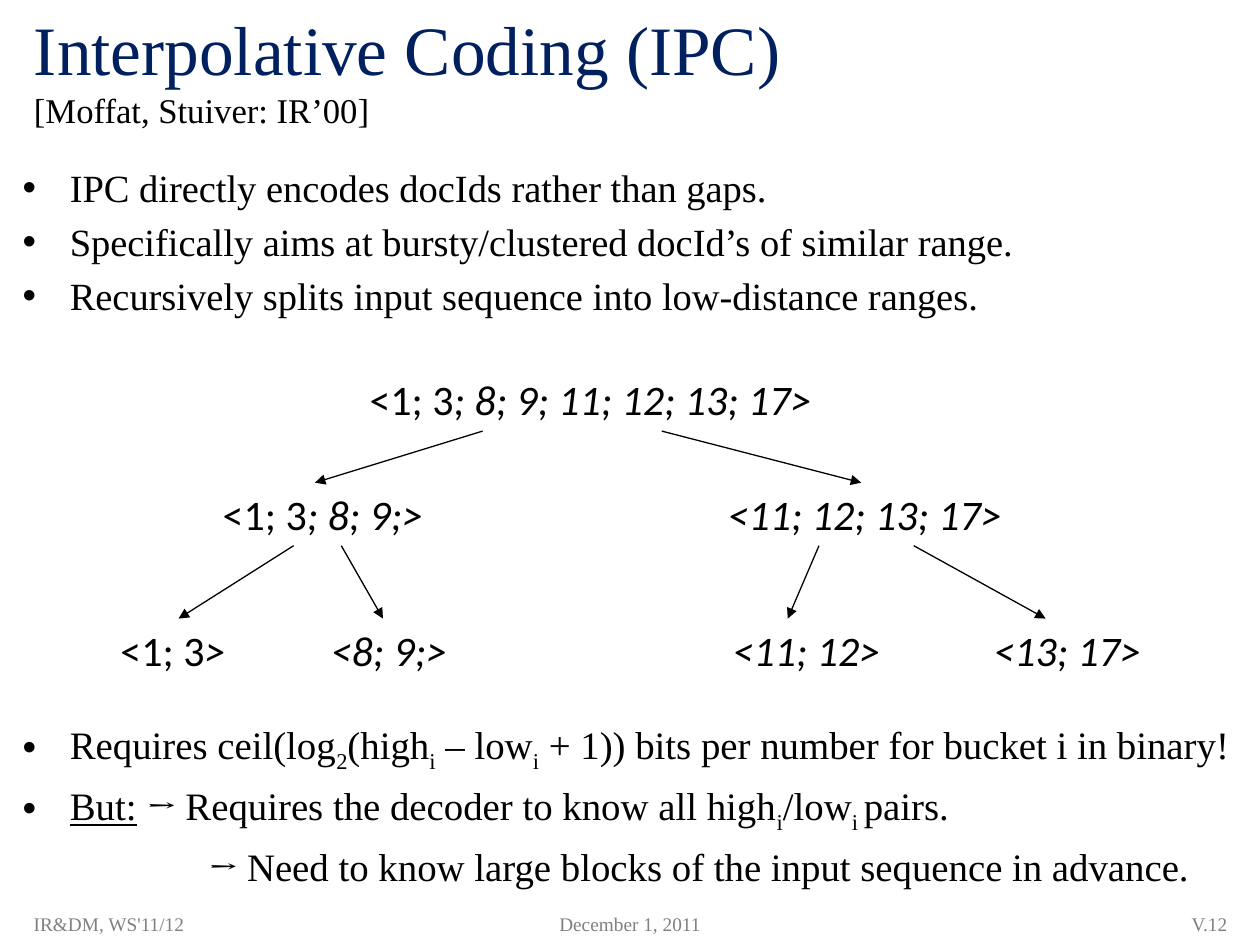
from dataclasses import dataclass

from lxml import etree
from pptx import Presentation
from pptx.dml.color import RGBColor
from pptx.enum.shapes import MSO_CONNECTOR
from pptx.enum.text import MSO_ANCHOR, MSO_AUTO_SIZE, PP_ALIGN
from pptx.oxml.ns import qn
from pptx.util import Cm, Pt

STRAIGHT = MSO_CONNECTOR.STRAIGHT
MIDDLE = MSO_ANCHOR.MIDDLE
NO_FIT = MSO_AUTO_SIZE.NONE
LEFT, CENTER, RIGHT = PP_ALIGN.LEFT, PP_ALIGN.CENTER, PP_ALIGN.RIGHT


@dataclass
class Theme:
    """Fonts, type sizes and colours of the slide."""
    serif: str = "Times New Roman"
    sans: str = "Calibri"
    symbol: str = "Cambria"
    title: float = 39.6
    cite: float = 19.8
    list: float = 22
    cost: float = 22.2
    node: float = 24
    footer: float = 11
    navy: RGBColor = RGBColor(0x00, 0x20, 0x60)
    black: RGBColor = RGBColor(0, 0, 0)
    gray: RGBColor = RGBColor(0x80, 0x80, 0x80)


theme = Theme()


def add_run(p, text, size, color=theme.black, font=theme.serif):
    """Append a formatted run to a paragraph and return it."""
    r = p.add_run()
    r.text = text
    r.font.size = Pt(size)
    r.font.name = font
    r.font.color.rgb = color
    return r


def place(sp, left, top, width, height):
    """Move a shape to a place in centimetres and return its text frame."""
    sp.left, sp.top, sp.width, sp.height = map(Cm, (left, top, width, height))
    sp.text_frame.auto_size = NO_FIT
    return sp.text_frame


prs = Presentation()
prs.slide_width, prs.slide_height = Cm(25.4), Cm(19.05)
s = prs.slides.add_slide(prs.slide_layouts[3])
title, bullets, costs = s.placeholders

# Title with citation
tf = place(title, 0.43, 0.43, 24.56, 1.9)
tf.vertical_anchor = MIDDLE
p = tf.paragraphs[0]
p.alignment = LEFT
add_run(p, "Interpolative Coding (IPC)", theme.title, theme.navy)
p.add_line_break()
add_run(p, "[Moffat, Stuiver: IR’00]", theme.cite)

# Bullet list
tf = place(bullets, 0.2, 3.18, 24.97, 3.81)
tf.text = "\n".join([
    "IPC directly encodes docIds rather than gaps.",
    "Specifically aims at bursty/clustered docId’s of similar range.",
    "Recursively splits input sequence into low-distance ranges.",
])
for p in tf.paragraphs:
    font = p.runs[0].font
    font.size, font.name = Pt(theme.list), theme.serif
    font.color.rgb = theme.black

# Tree of ranges: left, top, width, upright part, italic part
nodes = [
    (7.2, 7.4, 9.5, "<1; 3", "; 8; 9; 11; 12; 13; 17>"),
    (4.24, 9.73, 4.6, "<1; 3", "; 8; 9;>"),
    (14.42, 9.73, 6.0, "", "<11; 12; 13; 17>"),
    (2.18, 12.47, 2.7, "<1; 3", ">"),
    (6.42, 12.47, 2.9, "", "<8; 9;>"),
    (14.52, 12.47, 3.5, "", "<11; 12>"),
    (19.78, 12.47, 3.5, "", "<13; 17>"),
]
for left, top, width, upright, italic in nodes:
    tf = place(s.shapes.add_textbox(0, 0, 0, 0), left, top, width, 1.27)
    tf.word_wrap = False
    p = tf.paragraphs[0]
    if upright:
        add_run(p, upright, theme.node, font=theme.sans)
    add_run(p, italic, theme.node, font=theme.sans).font.italic = True

# Arrows between the tree levels: top, bottom, (start x, end x) pairs
levels = [
    (8.69, 9.73, [(9.73, 6.35), (13.34, 17.36)]),
    (11, 12.47, [(5.92, 3.6), (6.88, 7.72), (16.51, 15.88), (18.42, 21.08)]),
]
for top, bottom, spans in levels:
    for start, end in spans:
        c = s.shapes.add_connector(STRAIGHT, Cm(start), Cm(top), Cm(end), Cm(bottom))
        c.line.color.rgb = theme.black
        c.line.width = Pt(0.75)
        ln = c.line._get_or_add_ln()
        etree.SubElement(ln, qn("a:tailEnd"), type="triangle")
        etree.SubElement(c._element.spPr, qn("a:effectLst"))

# Cost list: each run is a text and a style
cost_lines = [
    [("Requires ceil(log", ""), ("2", "sub"), ("(high", ""), ("i", "sub"),
     (" – low", ""), ("i", "sub"),
     (" + 1)) bits per number for bucket i in binary!", "")],
    [("But:", "underline"), (" ", ""), ("→ ", "symbol"),
     ("Requires the decoder to know all high", ""), ("i", "sub"),
     ("/low", ""), ("i ", "sub"), ("pairs.", "")],
    [("→ ", "symbol"),
     ("Need to know large blocks of the input sequence in advance.", "")],
]
tf = place(costs, 0.2, 14.4, 24.97, 3.81)
for i, line in enumerate(cost_lines):
    p = tf.paragraphs[0] if i == 0 else tf.add_paragraph()
    for text, style in line:
        font = theme.symbol if style == "symbol" else theme.serif
        r = add_run(p, text, theme.cost, font=font)
        if style == "sub":
            r.font._element.set("baseline", "-25000")
        elif style == "underline":
            r.font.underline = True
pPr = p._p.get_or_add_pPr()
pPr.set("marL", str(Cm(3.74)))
pPr.set("indent", "0")
etree.SubElement(pPr, qn("a:buNone"))

# Footer
footers = [
    (0.43, 7.62, "IR&DM, WS'11/12", LEFT),
    (9.74, 5.92, "December 1, 2011", CENTER),
    (19.48, 5.51, "V.12", RIGHT),
]
for left, width, text, align in footers:
    tf = place(s.shapes.add_textbox(0, 0, 0, 0), left, 18.21, width, 0.84)
    tf.word_wrap = True
    tf.vertical_anchor = MIDDLE
    p = tf.paragraphs[0]
    p.alignment = align
    add_run(p, text, theme.footer, theme.gray)

prs.save("out.pptx")
